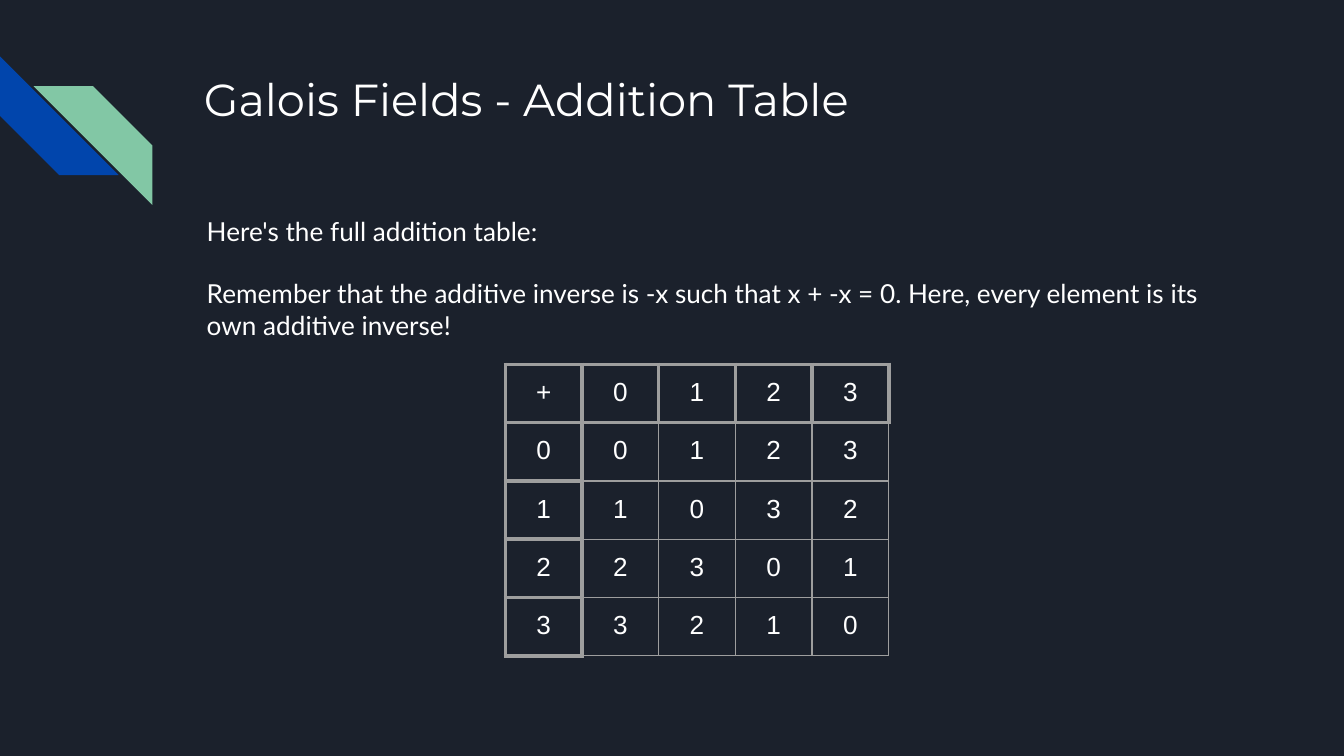
import pptx
import pptx.util
import pptx.oxml
import pptx.oxml.ns
import pptx.dml.color
import pptx.enum.shapes
import pptx.enum.text

Pt = pptx.util.Pt
HUES = {"back": "1B212C", "blue": "0145AC", "green": "82C7A5",
        "text": "FFFFFF", "rule": "9E9E9E"}
THICK, THIN = 2.25, 0.75


def tint(name):
    return pptx.dml.color.RGBColor.from_string(HUES[name])


def write(frame, text, font="Arial", size=14, color="text", align="LEFT", gap=0):
    frame.word_wrap = True
    frame.margin_left = frame.margin_right = Pt(7.2)
    frame.margin_top = frame.margin_bottom = Pt(7.2)
    for i, line in enumerate(text.split("\n")):
        para = frame.add_paragraph() if i else frame.paragraphs[0]
        para.alignment = getattr(pptx.enum.text.PP_ALIGN, align)
        para.space_before = Pt(gap if i else 0)
        run = para.add_run()
        run.text = line
        run.font.name = font
        run.font.size = Pt(size)
        run.font.color.rgb = tint(color)


class Deck:
    def __init__(self, wide, high):
        self.show = pptx.Presentation()
        self.show.slide_width, self.show.slide_height = Pt(wide), Pt(high)
        self.slide = self.show.slides.add_slide(self.show.slide_layouts[6])
        fill = self.slide.background.fill
        fill.solid()
        fill.fore_color.rgb = tint("back")

    def stripe(self, left, top, side, turn, color):
        kind = pptx.enum.shapes.MSO_SHAPE.DIAGONAL_STRIPE
        shape = self.slide.shapes.add_shape(kind, Pt(left), Pt(top), Pt(side), Pt(side))
        shape.rotation = turn
        shape.shadow.inherit = False
        shape.fill.solid()
        shape.fill.fore_color.rgb = tint(color)
        shape.line.fill.background()

    def text(self, left, top, wide, high, words, **style):
        box = self.slide.shapes.add_textbox(Pt(left), Pt(top), Pt(wide), Pt(high))
        write(box.text_frame, words, **style)

    def edge(self, cell, side, width):
        props = cell._tc.get_or_add_tcPr()
        props.append(pptx.oxml.parse_xml(
            f'<a:ln{side} {pptx.oxml.ns.nsdecls("a")} w="{int(Pt(width))}">'
            f'<a:solidFill><a:srgbClr val="{HUES["rule"]}"/></a:solidFill>'
            f'</a:ln{side}>'))

    def table(self, left, top, wide, high, rows):
        count = len(rows[0])
        frame = self.slide.shapes.add_table(
            len(rows), count, Pt(left), Pt(top), Pt(wide * count), Pt(high * len(rows)))
        grid = frame.table
        grid.first_row = grid.horz_banding = False
        for r, row in enumerate(rows):
            for c, word in enumerate(row):
                cell = grid.cell(r, c)
                cell.margin_left = cell.margin_right = Pt(7.2)
                cell.margin_top = cell.margin_bottom = Pt(7.2)
                head = r == 0 or c == 0
                heavy = {"L": head or c == 1, "R": head, "T": head or r == 1, "B": head}
                for side, bold in heavy.items():
                    self.edge(cell, side, THICK if bold else THIN)
                cell.fill.background()
                write(cell.text_frame, str(word), align="CENTER")


def main():
    deck = Deck(720, 405)
    deck.stripe(0, 30.2, 63.6, 270, "blue")
    deck.stripe(18, 46.2, 63.6, 90, "green")
    deck.text(102.2, 31, 554.4, 72, "Galois Fields - Addition Table",
              font="Montserrat", size=24)
    field = range(4)
    rows = [["+", *field]] + [[a, *(a ^ b for b in field)] for a in field]
    deck.table(270.7, 195.2, 41.1, 24, rows)
    deck.text(103.7, 108, 554.4, 72,
              "Here's the full addition table:\n"
              "Remember that the additive inverse is -x such that x + -x = 0. "
              "Here, every element is its own additive inverse!",
              font="Lato", gap=16.8)
    deck.show.save("out.pptx")


if __name__ == "__main__":
    main()
